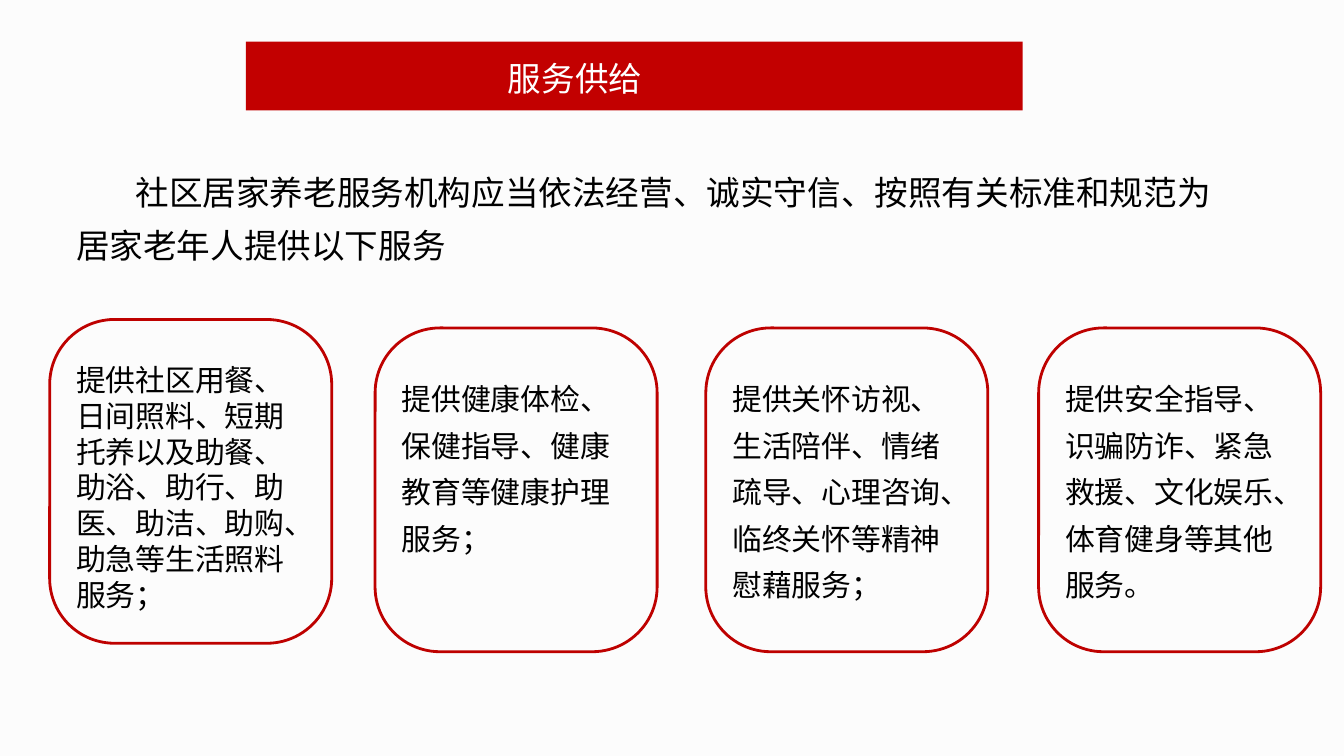
from pptx import Presentation
from pptx.dml.color import RGBColor
from pptx.enum.shapes import MSO_SHAPE
from pptx.enum.text import MSO_AUTO_SIZE, PP_ALIGN
from pptx.oxml.ns import qn
from pptx.util import Cm, Pt
from lxml.etree import SubElement

FONT = "Noto Sans CJK SC"
BACKGROUND = RGBColor(0xFC, 0xFC, 0xFC)
BANNER_RED = RGBColor(0xC2, 0x00, 0x00)
BORDER_RED = RGBColor(0xBE, 0x01, 0x00)
BLACK = RGBColor(0x00, 0x00, 0x00)
WHITE = RGBColor(0xFF, 0xFF, 0xFF)

INTRO = "社区居家养老服务机构应当依法经营、诚实守信、按照有关标准和规范为居家老年人提供以下服务"

# left, top, text height (cm), line spacing, wording
CARDS = [
    (0.94, 6.04, 5.03, 1.0,
     "提供社区用餐、日间照料、短期托养以及助餐、助浴、助行、助医、助洁、助购、助急等生活照料服务；"),
    (7.09, 6.2, 3.81, 1.3, "提供健康体检、保健指导、健康教育等健康护理服务；"),
    (13.34, 6.2, 4.7, 1.3,
     "提供关怀访视、生活陪伴、情绪疏导、心理咨询、临终关怀等精神慰藉服务；"),
    (19.63, 6.2, 4.7, 1.3,
     "提供安全指导、识骗防诈、紧急救援、文化娱乐、体育健身等其他服务。"),
]


def add_text(page, left, top, width, height, text, size,
             color=BLACK, spacing=1.0, align=None, indent=None):
    box = page.shapes.add_textbox(Cm(left), Cm(top), Cm(width), Cm(height))
    frame = box.text_frame
    frame.word_wrap = True
    frame.auto_size = MSO_AUTO_SIZE.SHAPE_TO_FIT_TEXT
    para = frame.paragraphs[0]
    para.text = text
    para.line_spacing = spacing
    para.alignment = align
    para.font.size = Pt(size)
    para.font.color.rgb = color
    para.font.name = FONT
    properties = para._p.get_or_add_pPr()
    if indent:
        properties.set("indent", str(Cm(indent)))
    # Chinese characters take the East Asian typeface
    SubElement(properties.find(qn("a:defRPr")), qn("a:ea"), typeface=FONT)


def add_banner(page):
    banner = page.shapes.add_shape(
        MSO_SHAPE.RECTANGLE, Cm(4.65), Cm(0.79), Cm(14.68), Cm(1.3))
    banner.shadow.inherit = False
    banner.fill.solid()
    banner.fill.fore_color.rgb = BANNER_RED
    banner.line.fill.background()
    add_text(page, 9.35, 0.97, 5.74, 1.02, "服务供给", 18,
             color=WHITE, align=PP_ALIGN.JUSTIFY)


def add_card(page, left, top, text_height, spacing, text):
    card = page.shapes.add_shape(
        MSO_SHAPE.ROUNDED_RECTANGLE, Cm(left), Cm(top), Cm(5.33), Cm(6.12))
    card.adjustments[0] = 0.23
    card.shadow.inherit = False
    card.fill.background()
    card.line.color.rgb = BORDER_RED
    card.line.width = Pt(1.5)
    add_text(page, left + 0.25, top + 0.67, 4.85, text_height, text, 16,
             spacing=spacing)


def main():
    deck = Presentation()
    deck.slide_width, deck.slide_height = Cm(25.4), Cm(14.29)
    page = deck.slides.add_slide(deck.slide_layouts[6])
    page.background.fill.solid()
    page.background.fill.fore_color.rgb = BACKGROUND

    add_banner(page)
    for card in CARDS:
        add_card(page, *card)
    add_text(page, 1.19, 2.9, 22.45, 2.26, INTRO, 18, spacing=1.3, indent=1.12)

    deck.save("out.pptx")


if __name__ == "__main__":
    main()
